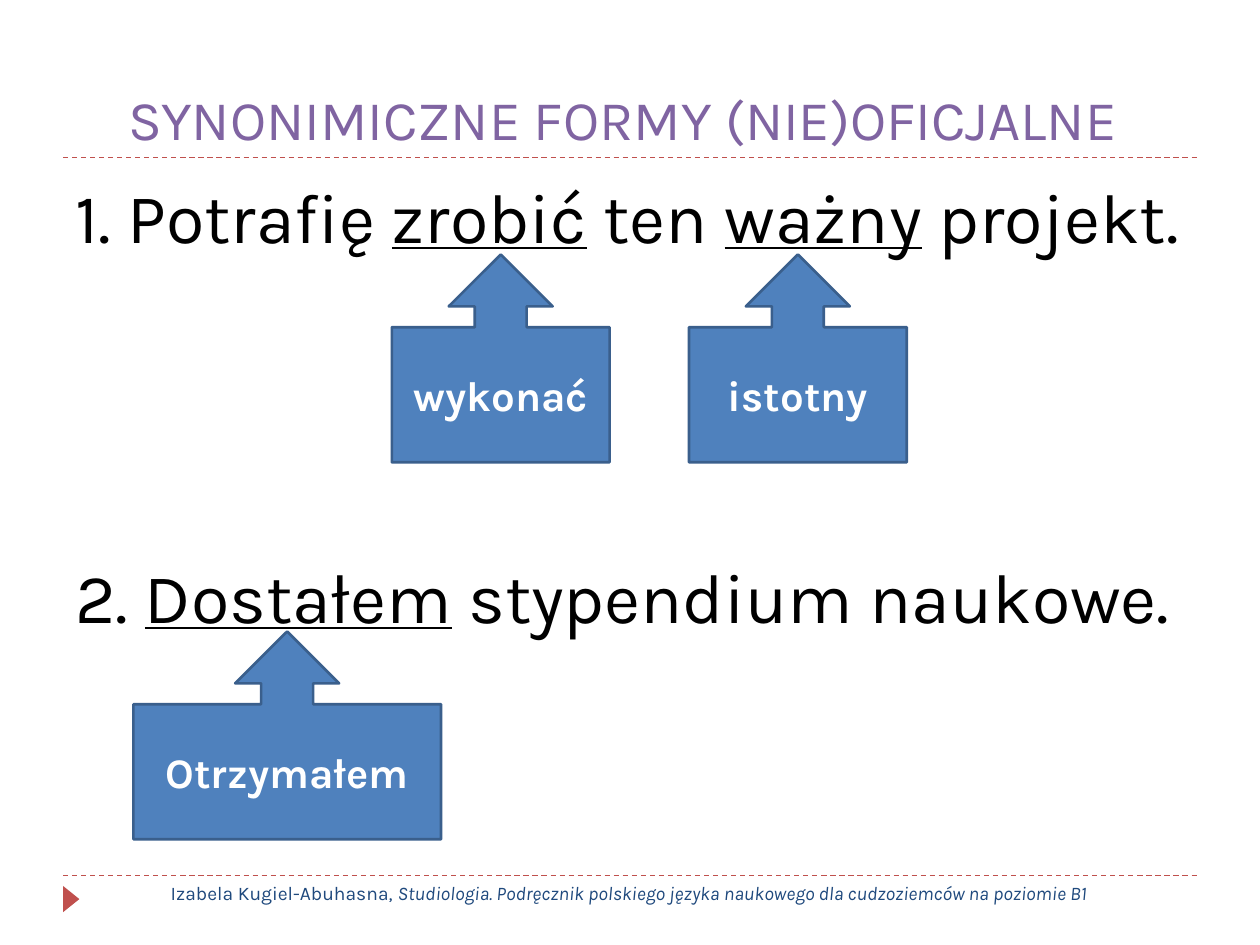
from lxml import etree
from pptx import Presentation, util as u
from pptx.dml.color import RGBColor
from pptx.enum import dml, shapes, text
from pptx.oxml import ns

COLORS = {
    "title": "8064A2",
    "accent": "C0504D",
    "footer": "1F497D",
    "sentence": "000000",
    "callout": "4F81BD",
    "callout_edge": "3A5F8C",
    "synonym": "FFFFFF",
}


def color(part):
    return RGBColor.from_string(COLORS[part])


def write(paragraph, words, part, size, align=text.PP_ALIGN.LEFT, **style):
    paragraph.alignment = align
    run = paragraph.add_run()
    run.text = words
    run.font.name = "Karla"
    run.font.size = u.Pt(size)
    run.font.color.rgb = color(part)
    for attribute, value in style.items():
        setattr(run.font, attribute, value)


deck = Presentation()
deck.slide_width = u.Cm(25.4)
deck.slide_height = u.Cm(19.05)
slide = deck.slides.add_slide(deck.slide_layouts[6])
center = text.PP_ALIGN.CENTER

for y in (17.65, 3.18):
    divider = slide.shapes.add_connector(
        shapes.MSO_CONNECTOR.STRAIGHT, u.Cm(1.27), u.Cm(y), u.Cm(24.13), u.Cm(y))
    divider.line.color.rgb = color("accent")
    divider.line.width = u.Pt(0.75)
    divider.line.dash_style = dml.MSO_LINE.DASH
    etree.SubElement(divider._element.spPr, ns.qn("a:effectLst"))

marker = slide.shapes.add_shape(
    shapes.MSO_SHAPE.ISOSCELES_TRIANGLE, u.Cm(1.17), u.Cm(17.96), u.Cm(0.53), u.Cm(0.33))
marker.rotation = 90
marker.shadow.inherit = False
marker.fill.solid()
marker.fill.fore_color.rgb = color("accent")
marker.line.fill.background()

title = slide.shapes.add_textbox(u.Cm(1.27), u.Cm(0.43), u.Cm(22.86), u.Cm(2.75)).text_frame
title.word_wrap = True
title.vertical_anchor = text.MSO_ANCHOR.BOTTOM
write(title.paragraphs[0], "SYNONIMICZNE FORMY (NIE)OFICJALNE ", "title", 32, center)

footer = slide.shapes.add_textbox(u.Cm(2.49), u.Cm(17.65), u.Cm(20.4), u.Cm(1.02)).text_frame
footer.word_wrap = True
write(footer.paragraphs[0], "Izabela Kugiel-Abuhasna, ", "footer", 11, center)
write(footer.paragraphs[0],
      "Studiologia. Podręcznik polskiego języka naukowego dla cudzoziemców na poziomie B1",
      "footer", 11, center, italic=True)

sentences = [
    (6, ["1. Potrafię ", "zrobić", " ten ", "ważny", " projekt."]),
    (169, ["2. ", "Dostałem", " stypendium naukowe."]),
]
body = slide.shapes.add_textbox(u.Cm(1.27), u.Cm(3.38), u.Cm(22.86), u.Cm(13.72)).text_frame
body.word_wrap = True
for number, (gap, pieces) in enumerate(sentences):
    sentence = body.add_paragraph() if number else body.paragraphs[0]
    sentence.space_before = u.Pt(gap)
    for position, piece in enumerate(pieces):
        write(sentence, piece, "sentence", 40, underline=position % 2 == 1)

synonyms = [
    ("wykonać", 7.9, 5.13, 4.39),
    ("istotny", 13.89, 5.13, 4.39),
    ("Otrzymałem", 2.69, 12.73, 6.2),
]
for synonym, left, top, width in synonyms:
    callout = slide.shapes.add_shape(
        shapes.MSO_SHAPE.UP_ARROW_CALLOUT, u.Cm(left), u.Cm(top), u.Cm(width), u.Cm(4.19))
    callout.shadow.inherit = False
    callout.fill.solid()
    callout.fill.fore_color.rgb = color("callout")
    callout.line.color.rgb = color("callout_edge")
    callout.line.width = u.Pt(1.5)
    callout.text_frame.word_wrap = True
    callout.text_frame.vertical_anchor = text.MSO_ANCHOR.MIDDLE
    write(callout.text_frame.paragraphs[0], synonym, "synonym", 24, center, bold=True)

deck.save("out.pptx")
